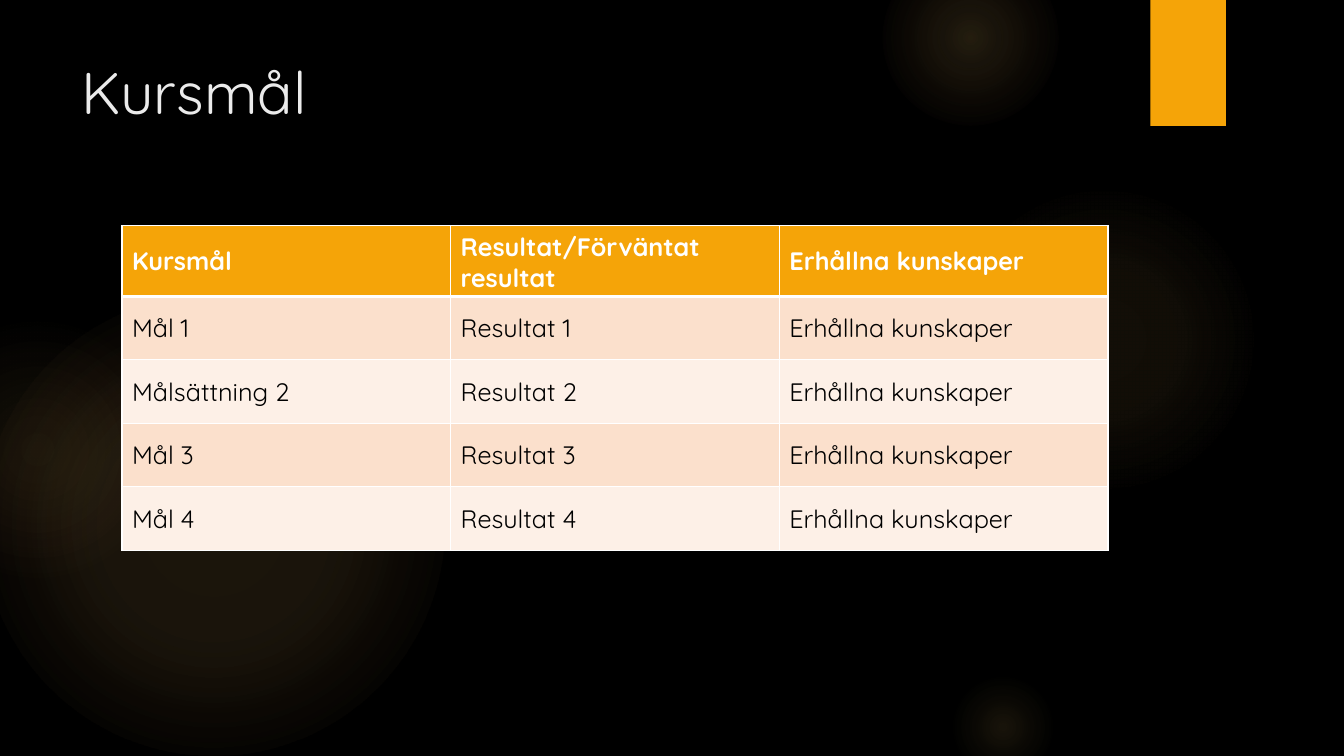
from dataclasses import dataclass
from lxml.etree import SubElement
from pptx import Presentation
from pptx.dml.color import RGBColor
from pptx.enum.shapes import MSO_SHAPE
from pptx.enum.text import MSO_ANCHOR
from pptx.oxml import parse_xml
from pptx.oxml.ns import nsdecls, qn
from pptx.util import Inches, Pt


@dataclass(frozen=True)
class Theme:
    font: str = "Quicksand"
    back: str = "000000"
    gold: str = "F5A408"
    glow: str = "FAC96A"
    rose: str = "F59B74"
    title: str = "EBEBEB"
    white: str = "FFFFFF"
    black: str = "000000"
    bands: tuple = ("FBE0CC", "FDF0E7")
    big: int = 42
    body: int = 18
    thin: int = 1
    thick: int = 3


THEME = Theme()

GLOWS = [
    ((-0.17, 2.92, 4.58), ((0, 11), (36, 10), (75, 0)), THEME.glow),
    ((-0.92, 3.17, 2.58), ((0, 8), (36, 5), (71, 0)), THEME.rose),
    ((9.41, 1.83, 3.08), ((0, 7), (36, 6), (69, 0)), THEME.glow),
    ((8.75, -0.5, 1.75), ((0, 14), (36, 7), (73, 0)), THEME.glow),
    ((9.41, 6.67, 1.08), ((0, 10), (31, 5), (66, 0)), THEME.glow),
]

ROWS = [
    ("Kursmål", "Resultat/Förväntat resultat", "Erhållna kunskaper"),
    ("Mål 1", "Resultat 1", "Erhållna kunskaper"),
    ("Målsättning 2", "Resultat 2", "Erhållna kunskaper"),
    ("Mål 3", "Resultat 3", "Erhållna kunskaper"),
    ("Mål 4", "Resultat 4", "Erhållna kunskaper"),
]


def paint(fill, color):
    fill.solid()
    fill.fore_color.rgb = RGBColor.from_string(color)


def style(frame, color, **look):
    for part in frame.paragraphs:
        for key, value in {"name": THEME.font, **look}.items():
            setattr(part.font, key, value)
        part.font.color.rgb = RGBColor.from_string(color)


def add_plain(slide, kind, box):
    shape = slide.shapes.add_shape(kind, *map(Inches, box))
    shape.shadow.inherit = False
    shape.line.fill.background()
    return shape


def add_glow(slide, box, stops, edge):
    left, top, size = box
    shape = add_plain(slide, MSO_SHAPE.OVAL, (left, top, size, size))
    shape.fill.background()
    tints = (THEME.glow, THEME.glow, edge)
    marks = "".join(
        f'<a:gs pos="{spot * 1000}"><a:srgbClr val="{tint}">'
        f'<a:alpha val="{alpha * 1000}"/></a:srgbClr></a:gs>'
        for (spot, alpha), tint in zip(stops, tints)
    )
    grad = parse_xml(
        f'<a:gradFill {nsdecls("a")} rotWithShape="1"><a:gsLst>{marks}</a:gsLst>'
        '<a:path path="circle"><a:fillToRect l="50000" t="50000" r="50000" b="50000"/>'
        '</a:path></a:gradFill>'
    )
    props = shape.element.spPr
    props.replace(props.find(qn("a:noFill")), grad)


def add_back(slide):
    paint(slide.background.fill, THEME.back)
    for glow in GLOWS:
        add_glow(slide, *glow)


def add_tab(slide, box):
    paint(add_plain(slide, MSO_SHAPE.RECTANGLE, box).fill, THEME.gold)


def add_title(slide, box, text):
    frame = slide.shapes.add_textbox(*map(Inches, box)).text_frame
    frame.word_wrap = True
    frame.vertical_anchor = MSO_ANCHOR.TOP
    frame.text = text
    style(frame, THEME.title, size=Pt(THEME.big))


def add_edges(cell, row):
    props = cell._tc.get_or_add_tcPr()
    heavy = {0: "B", 1: "T"}.get(row)
    for side in "LRTB":
        width = THEME.thick if side == heavy else THEME.thin
        line = SubElement(props, qn(f"a:ln{side}"), w=str(Pt(width)))
        fill = SubElement(line, qn("a:solidFill"))
        SubElement(fill, qn("a:srgbClr"), val=THEME.white)


def add_goals(slide, box, rows):
    count, wide = len(rows), len(rows[0])
    table = slide.shapes.add_table(count, wide, *map(Inches, box)).table
    table.horz_banding = False
    for column in table.columns:
        column.width = Inches(box[2] / wide)
    for r, row in enumerate(rows):
        table.rows[r].height = Inches(box[3] / count)
        head = r == 0
        for c, text in enumerate(row):
            cell = table.cell(r, c)
            cell.text = text
            cell.vertical_anchor = MSO_ANCHOR.MIDDLE
            add_edges(cell, r)
            paint(cell.fill, THEME.gold if head else THEME.bands[(r - 1) % 2])
            ink = THEME.white if head else THEME.black
            style(cell.text_frame, ink, size=Pt(THEME.body), bold=head)


def main():
    deck = Presentation()
    deck.slide_width, deck.slide_height = Inches(13.33), Inches(7.5)
    slide = deck.slides.add_slide(deck.slide_layouts[6])
    add_back(slide)
    add_tab(slide, (11.41, 0, 0.75, 1.25))
    add_title(slide, (0.71, 0.5, 10.29, 1.53), "Kursmål")
    add_goals(slide, (1.21, 2.24, 9.78, 3.15), ROWS)
    deck.save("out.pptx")


if __name__ == "__main__":
    main()
